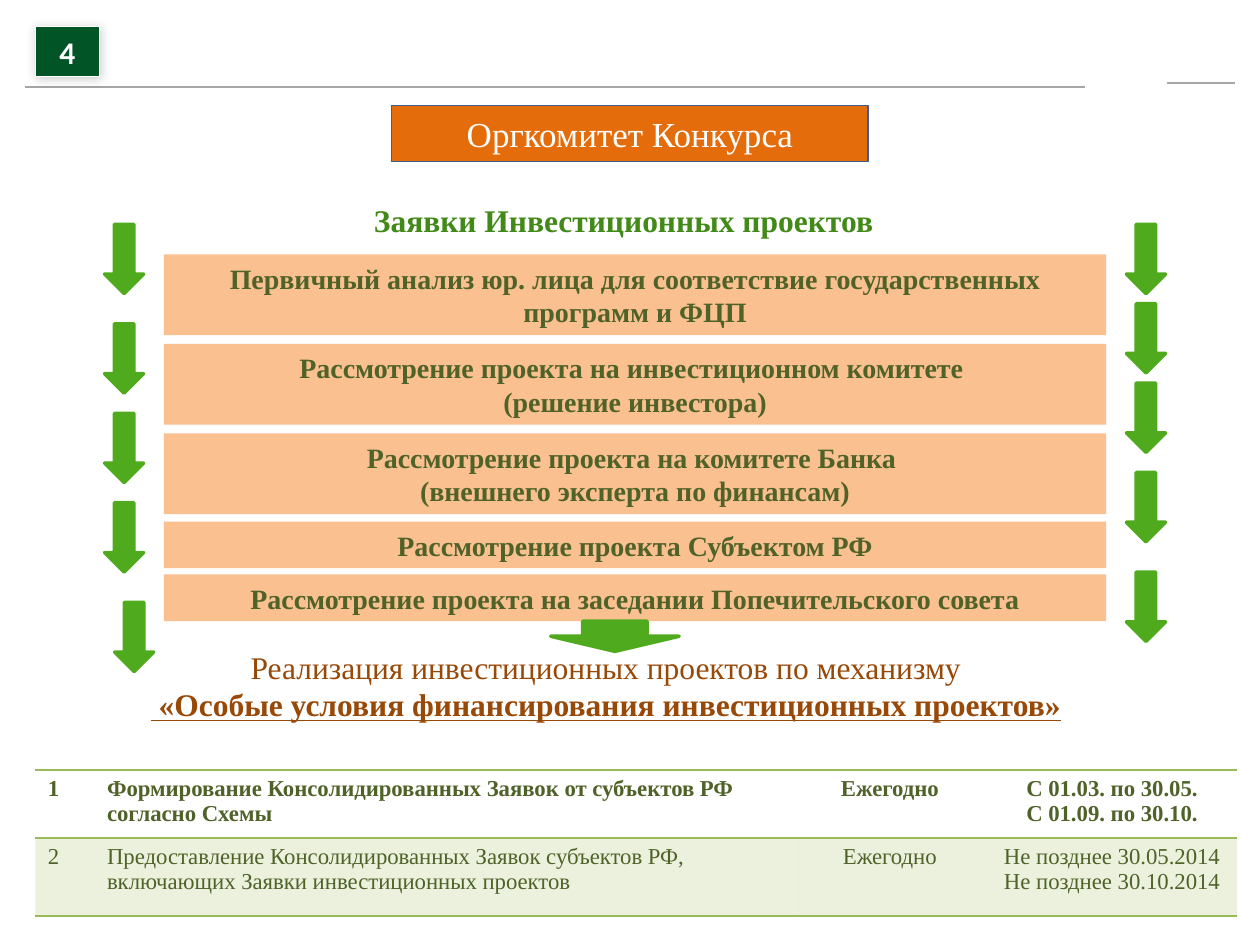
from dataclasses import dataclass

from lxml import etree
from pptx import Presentation
from pptx.dml.color import RGBColor
from pptx.enum.shapes import MSO_CONNECTOR, MSO_SHAPE
from pptx.enum.text import MSO_ANCHOR, MSO_AUTO_SIZE, PP_ALIGN
from pptx.oxml import parse_xml
from pptx.oxml.ns import nsdecls, qn
from pptx.util import Inches, Pt

RECT, DOWN_ARROW = MSO_SHAPE.RECTANGLE, MSO_SHAPE.DOWN_ARROW
LEFT, CENTER = PP_ALIGN.LEFT, PP_ALIGN.CENTER
SERIF = "Times New Roman"
GREEN, OLIVE, PEACH, LIME = "50AA1E", "4F6228", "FAC090", "9BBB59"
NO_TABLE_STYLE = "{2D5ABB26-0587-4C30-8999-92F81FD0307C}"


@dataclass
class Style:
    size: float
    color: str
    bold: bool = False
    font: str = SERIF
    align: PP_ALIGN = CENTER


@dataclass
class Box:
    left: float
    top: float
    width: float
    height: float

    def lengths(self):
        return [Inches(v) for v in (self.left, self.top, self.width, self.height)]


@dataclass
class Step:
    top: float
    height: float
    lines: list[str]


@dataclass
class ScheduleRow:
    height: float
    cells: list[list[str]]
    bold: bool
    shaded: bool


def rgb(color: str) -> RGBColor:
    return RGBColor.from_string(color)


def write(frame, lines: list[str], style: Style) -> None:
    for i, line in enumerate(lines):
        paragraph = frame.paragraphs[0] if i == 0 else frame.add_paragraph()
        paragraph.add_run().text = line
        paragraph.alignment = style.align
        font = paragraph.font
        font.name, font.size, font.bold = style.font, Pt(style.size), style.bold
        font.color.rgb = rgb(style.color)


def add_block(slide, kind, box: Box, fill: str, line: str = "", width: float = 0.75):
    block = slide.shapes.add_shape(kind, *box.lengths())
    block.shadow.inherit = False
    block.fill.solid()
    block.fill.fore_color.rgb = rgb(fill)
    if line:
        block.line.color.rgb = rgb(line)
        block.line.width = Pt(width)
    else:
        block.line.fill.background()
    return block


def add_label(slide, box: Box, fill: str, lines: list[str], style: Style, line: str = ""):
    label = add_block(slide, RECT, box, fill, line)
    label.text_frame.word_wrap = True
    label.text_frame.vertical_anchor = MSO_ANCHOR.MIDDLE
    write(label.text_frame, lines, style)
    return label


def add_arrow(slide, box: Box) -> None:
    arrow = add_block(slide, DOWN_ARROW, box, GREEN, GREEN, 2)
    etree.SubElement(arrow.line._get_or_add_ln(), qn("a:round"))


def add_caption(slide, box: Box, lines: list[str], style: Style):
    frame = slide.shapes.add_textbox(*box.lengths()).text_frame
    frame.word_wrap = False
    frame.auto_size = MSO_AUTO_SIZE.SHAPE_TO_FIT_TEXT
    write(frame, lines, style)
    return frame


def add_rule(slide, x1: float, x2: float, y: float) -> None:
    rule = slide.shapes.add_connector(
        MSO_CONNECTOR.STRAIGHT, Inches(x1), Inches(y), Inches(x2), Inches(y))
    rule.line.color.rgb = rgb("A6A6A6")
    rule.line.width = Pt(1)
    etree.SubElement(rule._element.spPr, qn("a:effectLst"))


def format_cell(cell, shaded: bool) -> None:
    properties = cell._tc.get_or_add_tcPr()
    for side in ("lnT", "lnB"):
        properties.append(parse_xml(
            f'<a:{side} {nsdecls("a")} w="12700"><a:solidFill>'
            f'<a:srgbClr val="{LIME}"/></a:solidFill></a:{side}>'))
    if shaded:
        cell.fill.solid()
        cell.fill.fore_color.rgb = rgb(LIME)
        tint = properties.find(qn("a:solidFill")).find(qn("a:srgbClr"))
        etree.SubElement(tint, qn("a:alpha"), val="20000")
    else:
        cell.fill.background()


def add_schedule(slide, box: Box, widths: list[float], rows: list[ScheduleRow]) -> None:
    table = slide.shapes.add_table(len(rows), len(widths), *box.lengths()).table
    table.first_row = table.horz_banding = False
    table._tbl.tblPr.find(qn("a:tableStyleId")).text = NO_TABLE_STYLE
    for column, width in zip(table.columns, widths):
        column.width = Inches(width)
    for r, row in enumerate(rows):
        table.rows[r].height = Inches(row.height)
        for c, lines in enumerate(row.cells):
            cell = table.cell(r, c)
            format_cell(cell, row.shaded)
            align = LEFT if c < 2 else CENTER
            write(cell.text_frame, lines, Style(13, OLIVE, row.bold, align=align))


STEPS = [
    Step(2.02, 0.64, ["Первичный анализ юр. лица для соответствие государственных программ и ФЦП"]),
    Step(2.73, 0.64, ["Рассмотрение проекта на инвестиционном комитете ", "(решение инвестора)"]),
    Step(3.44, 0.64, ["Рассмотрение проекта на комитете Банка ", "(внешнего эксперта по финансам)"]),
    Step(4.14, 0.37, ["Рассмотрение проекта Субъектом РФ"]),
    Step(4.56, 0.37, ["Рассмотрение проекта на заседании Попечительского совета"]),
]
SIDE_ARROWS = [
    (0.83, [1.78, 2.57, 3.28, 3.99]),
    (0.91, [4.78]),
    (8.94, [1.78, 2.41, 3.04, 3.75, 4.54]),
]
SCHEDULE = [
    ScheduleRow(0.54, [
        ["1"],
        ["Формирование Консолидированных Заявок от субъектов РФ согласно Схемы"],
        ["Ежегодно "],
        ["С 01.03. по 30.05.", "С 01.09. по 30.10."]], True, False),
    ScheduleRow(0.62, [
        ["2"],
        ["Предоставление Консолидированных Заявок субъектов РФ, включающих Заявки инвестиционных проектов"],
        ["Ежегодно "],
        ["Не позднее 30.05.2014", "Не позднее 30.10.2014"]], False, True),
]


def main() -> None:
    deck = Presentation()
    deck.slide_width, deck.slide_height = Inches(10), Inches(7.5)
    slide = deck.slides.add_slide(deck.slide_layouts[6])

    # Header rules and page number
    add_rule(slide, 0.2, 8.61, 0.69)
    add_rule(slide, 9.26, 9.8, 0.66)
    page_number = add_label(slide, Box(0.28, 0.21, 0.51, 0.4), "005426", ["4"],
                            Style(18, "FFFFFF", True, "Calibri"), "FFFFFF")
    effects = page_number._element.spPr.find(qn("a:effectLst"))
    effects.append(parse_xml(
        f'<a:outerShdw {nsdecls("a")} blurRad="76200" dist="12700" dir="2700000">'
        '<a:srgbClr val="000000"><a:alpha val="20000"/></a:srgbClr></a:outerShdw>'))

    # Committee and review steps
    add_caption(slide, Box(2.87, 1.55, 4.27, 0.4), ["Заявки Инвестиционных проектов"],
                Style(18, "418A18", True, align=LEFT))
    for step in STEPS:
        add_label(slide, Box(1.3, step.top, 7.48, step.height), PEACH, step.lines,
                  Style(16, OLIVE, True))
    add_label(slide, Box(3.11, 0.84, 3.78, 0.44), "E46C0A", ["Оргкомитет Конкурса"],
              Style(20, "FFFFFF"), "3A5F8C")

    # Arrows
    add_arrow(slide, Box(4.37, 4.93, 1.02, 0.24))
    for left, tops in SIDE_ARROWS:
        for top in tops:
            add_arrow(slide, Box(left, top, 0.31, 0.55))

    # Outcome
    outcome = add_caption(slide, Box(1.06, 5.09, 7.5, 0.71), [
        "Реализация инвестиционных проектов по механизму",
        " «Особые условия финансирования инвестиционных проектов»"], Style(18, "984807"))
    mechanism = outcome.paragraphs[1].font
    mechanism.bold = mechanism.underline = True

    # Schedule
    add_schedule(slide, Box(0.28, 6.11, 9.54, 1.16), [0.47, 5.59, 1.49, 1.99], SCHEDULE)

    deck.save("out.pptx")


if __name__ == "__main__":
    main()
